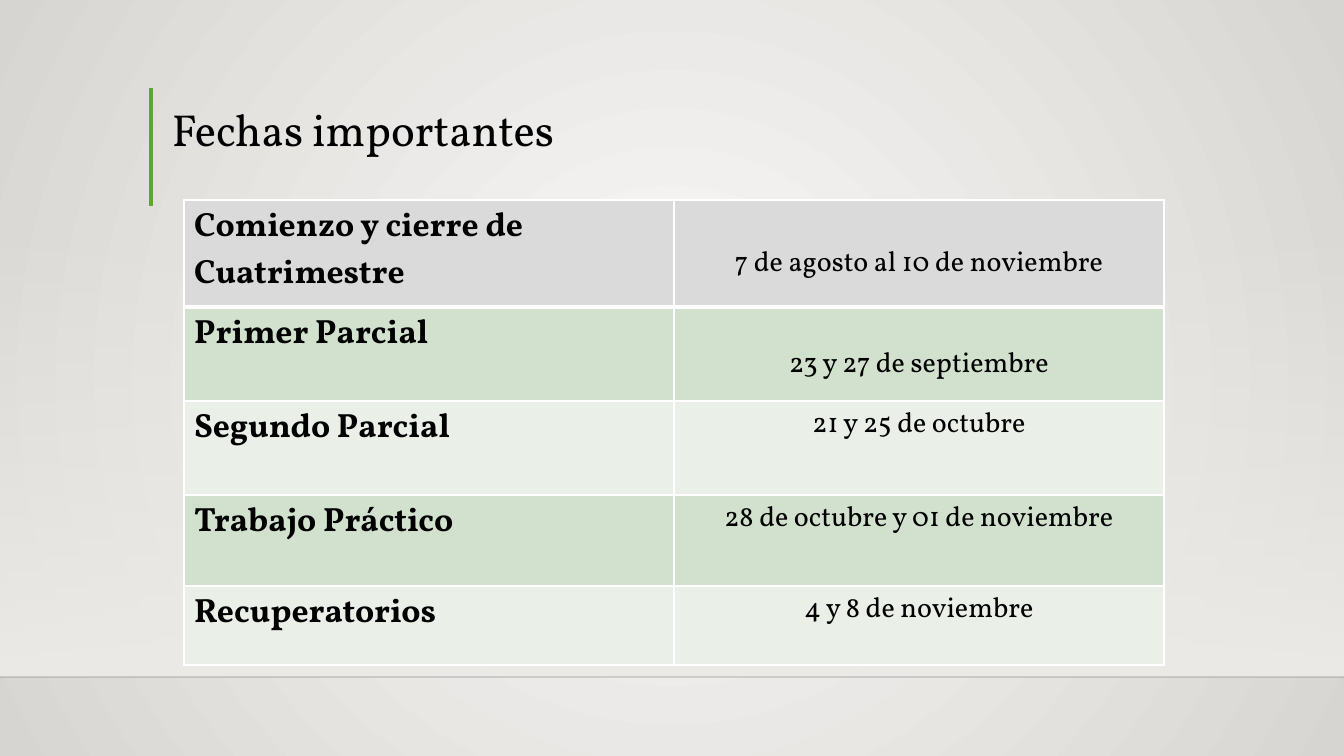
from lxml.etree import SubElement
from pptx import Presentation
from pptx.dml.color import RGBColor
from pptx.enum.shapes import MSO_CONNECTOR as Connector, MSO_SHAPE as Shape
from pptx.enum.text import MSO_ANCHOR as Anchor, PP_ALIGN as Align
from pptx.oxml.ns import qn
from pptx.util import Pt

TITLE = "Fechas importantes"
DATES = [
    ("Comienzo y cierre de Cuatrimestre", "7 de agosto al 10 de noviembre"),
    ("Primer Parcial", "23 y 27 de septiembre"),
    ("Segundo Parcial", "21 y 25 de octubre"),
    ("Trabajo Práctico", "28 de octubre y 01 de noviembre"),
    ("Recuperatorios", "4 y 8 de noviembre"),
]
ROW_HEIGHTS = [107, 94, 94, 91, 79]
DATE_TOP_MARGINS = [45, 39, 5, 5, 5]
COLUMN_WIDTH = 490
TABLE_LEFT, TABLE_TOP = 184, 200
SLIDE_WIDTH, SLIDE_HEIGHT = 1344, 756
FLOOR_Y = 677

FONT = "Vollkorn"
BLACK = RGBColor(0x00, 0x00, 0x00)
WHITE = RGBColor(0xFF, 0xFF, 0xFF)
GREEN = RGBColor(0x5F, 0xA5, 0x34)
GLOW = RGBColor(0xFA, 0xFA, 0xF9)
EDGE = RGBColor(0xD7, 0xD5, 0xD2)
HAZE = RGBColor(0xED, 0xEB, 0xE7)
HEADER = RGBColor(0xDA, 0xDA, 0xDA)
BANDS = [RGBColor(0xEA, 0xF0, 0xE8), RGBColor(0xD2, 0xE1, 0xCE)]


def px(length):
    return round(length * 914400 / 100.8)


def write(frame, text, size, bold=False, align=Align.LEFT, spacing=1.0):
    frame.word_wrap = True
    paragraph = frame.paragraphs[0]
    paragraph.alignment = align
    paragraph.line_spacing = spacing
    run = paragraph.add_run()
    run.text = text
    run.font.name = FONT
    run.font.size = Pt(size)
    run.font.bold = bold
    run.font.color.rgb = BLACK


def set_opacity(color, percent):
    SubElement(color, qn("a:alpha"), val=str(percent * 1000))


def set_gradient(fill, start, end):
    fill.gradient()
    for stop, color, position in zip(fill.gradient_stops, (start, end), (0, 1)):
        stop.color.rgb = color
        stop.position = position


def draw_line(slide, start, end, color, width):
    line = slide.shapes.add_connector(Connector.STRAIGHT, *map(px, start + end))
    line.line.color.rgb = color
    line.line.width = Pt(width)
    SubElement(line._element.spPr, qn("a:effectLst"))
    return line


def set_borders(cell, widths):
    properties = cell._tc.get_or_add_tcPr()
    for side, width in widths.items():
        border = SubElement(properties, qn(f"a:ln{side}"), w=str(Pt(width)))
        fill = SubElement(border, qn("a:solidFill"))
        SubElement(fill, qn("a:srgbClr"), val=str(WHITE))


def draw_backdrop(slide):
    set_gradient(slide.background.fill, GLOW, EDGE)
    gradient = slide._element.find(".//" + qn("a:gradFill"))
    gradient.remove(gradient.find(qn("a:lin")))
    radial = SubElement(gradient, qn("a:path"), path="circle")
    SubElement(radial, qn("a:fillToRect"), l="50000", t="50000", r="50000", b="50000")

    haze = slide.shapes.add_shape(
        Shape.RECTANGLE, 0, px(222), px(SLIDE_WIDTH), px(FLOOR_Y - 222))
    haze.shadow.inherit = False
    haze.line.fill.background()
    set_gradient(haze.fill, HAZE, HAZE)
    haze.fill.gradient_angle = 270
    set_opacity(haze._element.spPr.find(".//" + qn("a:srgbClr")), 0)

    floor = draw_line(slide, (0, FLOOR_Y), (SLIDE_WIDTH, FLOOR_Y), BLACK, 1)
    set_opacity(floor._element.spPr.find(".//" + qn("a:srgbClr")), 20)


def draw_title(slide):
    draw_line(slide, (151, 88), (151, 206), GREEN, 3)
    title = slide.shapes.add_textbox(px(162), px(45), px(1049), px(116))
    title.text_frame.vertical_anchor = Anchor.BOTTOM
    write(title.text_frame, TITLE, 32, spacing=0.9)


def draw_dates(slide):
    table = slide.shapes.add_table(
        len(DATES), 2, px(TABLE_LEFT), px(TABLE_TOP),
        px(2 * COLUMN_WIDTH), px(sum(ROW_HEIGHTS))).table
    for column in table.columns:
        column.width = px(COLUMN_WIDTH)
    for index, (event, date) in enumerate(DATES):
        table.rows[index].height = px(ROW_HEIGHTS[index])
        event_cell, date_cell = table.rows[index].cells
        date_cell.margin_top = px(DATE_TOP_MARGINS[index])
        for cell in (event_cell, date_cell):
            set_borders(cell, {"L": 1, "R": 1, "T": 3 if index == 1 else 1,
                               "B": 3 if index == 0 else 1})
            cell.fill.solid()
            cell.fill.fore_color.rgb = BANDS[index % 2] if index else HEADER
        write(event_cell.text_frame, event, 24, bold=True)
        write(date_cell.text_frame, date, 20, align=Align.CENTER)


def main():
    deck = Presentation()
    deck.slide_width, deck.slide_height = px(SLIDE_WIDTH), px(SLIDE_HEIGHT)
    slide = deck.slides.add_slide(deck.slide_layouts[6])
    draw_backdrop(slide)
    draw_title(slide)
    draw_dates(slide)
    deck.save("out.pptx")


if __name__ == "__main__":
    main()
